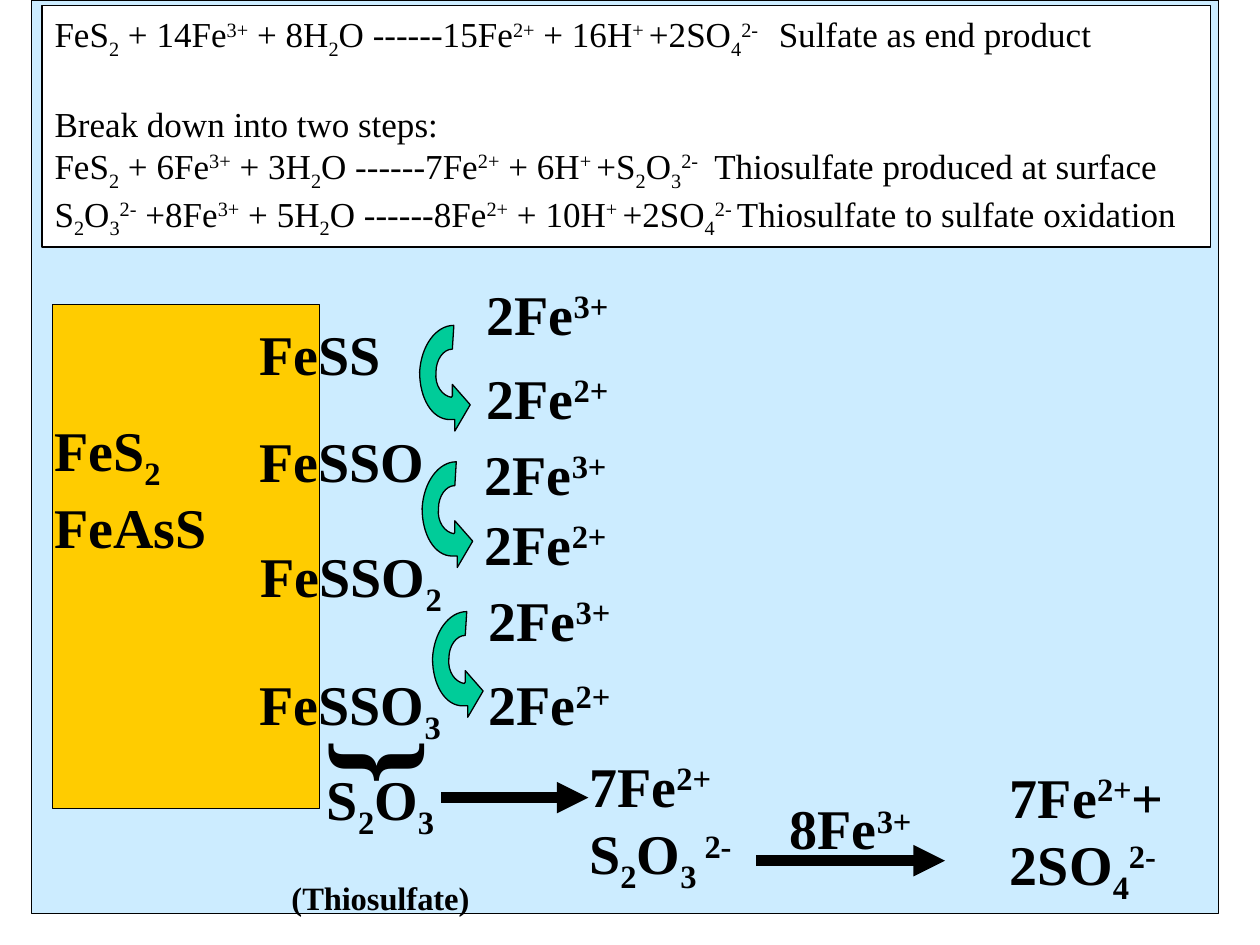
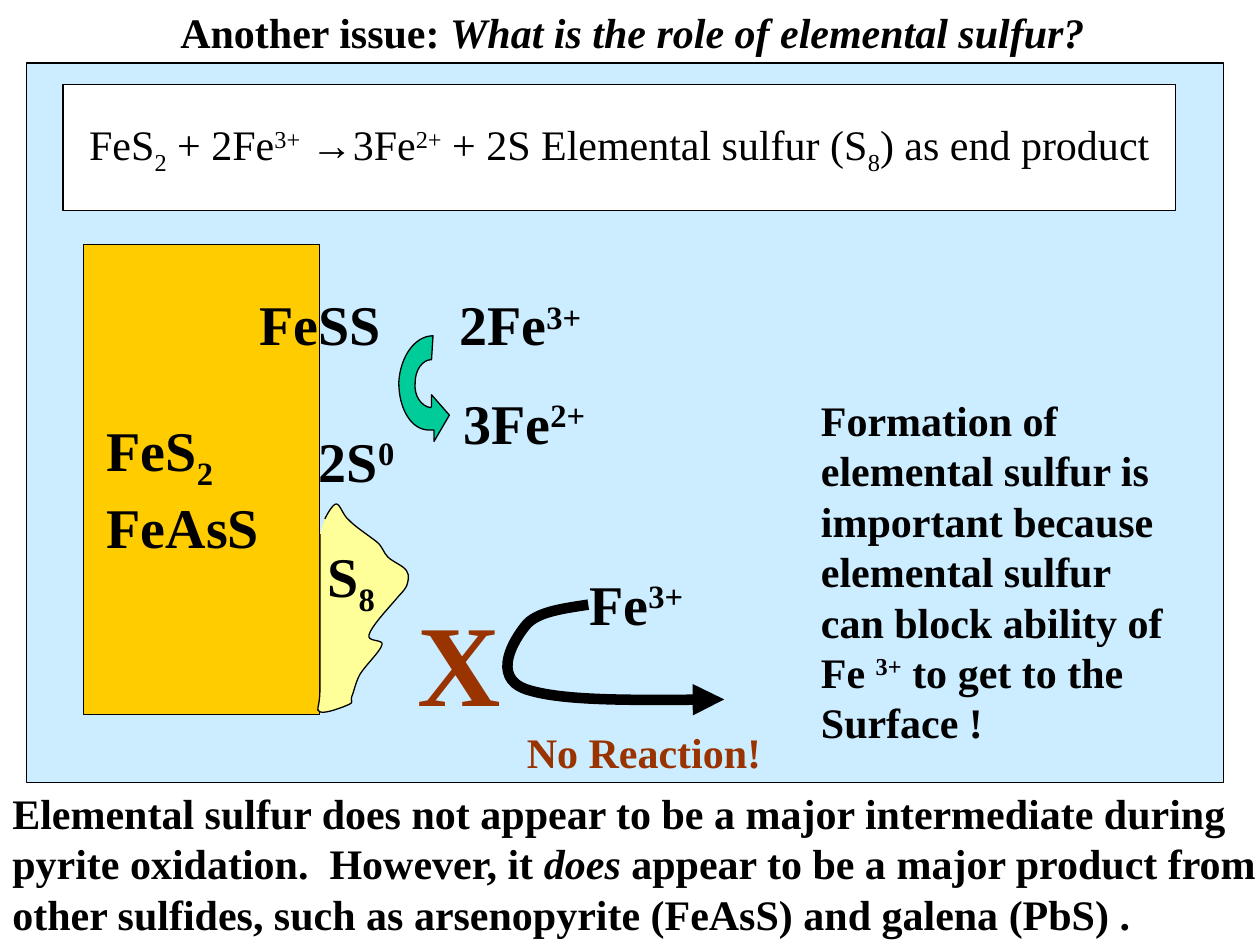
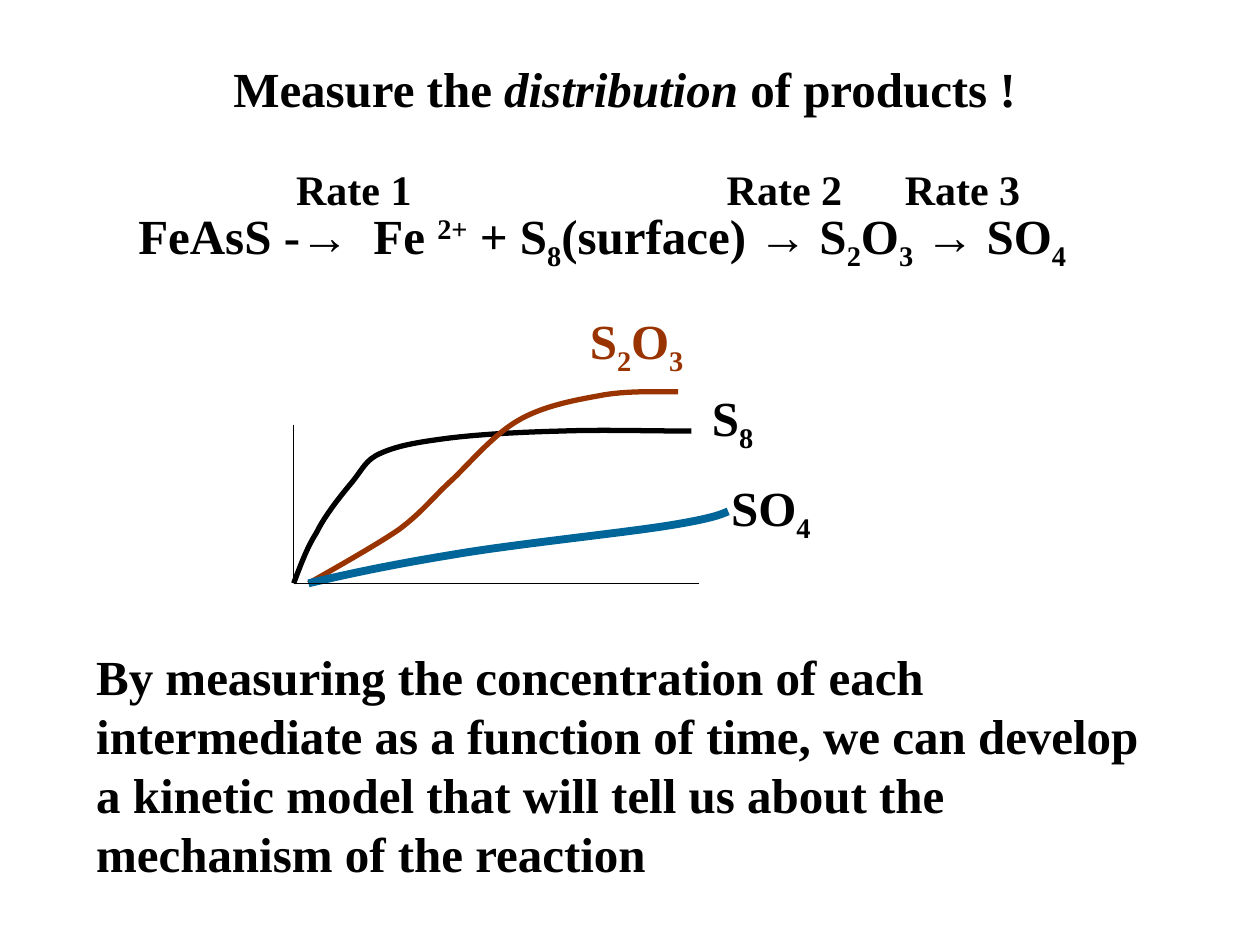
from dataclasses import dataclass

from lxml.etree import SubElement
from pptx import Presentation
from pptx.dml.color import RGBColor as RGB
from pptx.enum.shapes import MSO_CONNECTOR as CONN, MSO_SHAPE as SHAPE
from pptx.enum.text import MSO_ANCHOR as ANCHOR, MSO_AUTO_SIZE as AUTO, PP_ALIGN as ALIGN
from pptx.oxml.ns import qn
from pptx.util import Cm, Pt


@dataclass(frozen=True)
class Theme:
    font: str = "Times New Roman"
    ink: RGB = RGB(0x00, 0x00, 0x00)
    paper: RGB = RGB(0xFF, 0xFF, 0xFF)
    water: RGB = RGB(0xCC, 0xEC, 0xFF)
    mineral: RGB = RGB(0xFF, 0xCC, 0x00)
    transfer: RGB = RGB(0x00, 0xCC, 0x99)
    sulfur: RGB = RGB(0xFF, 0xFF, 0x99)
    rust: RGB = RGB(0x99, 0x33, 0x00)
    blue: RGB = RGB(0x00, 0x66, 0x99)
    equation: int = 20
    body: int = 24
    heading: int = 28
    species: int = 32
    symbol: int = 66
    thin: float = 0.75
    curve: float = 3
    thick: float = 4.5
    arrow: float = 6


T = Theme()
MARKS = {"_": "sub", "^": "sup", "*": "italic"}
BASELINES = {"sub": "-25000", "sup": "30000"}


def text(s, content, box=None, *, sp=None, size=T.species, bold=True, color=T.ink,
         align=ALIGN.LEFT, wrap=False, tabs=(), gaps=None):
    """Write paragraphs; _sub_, ^super^ and *italic* switch the run format."""
    framed = sp is not None and box is None
    sp = sp or s.shapes.add_textbox(*map(Cm, box))
    if box:
        sp.left, sp.top, sp.width, sp.height = map(Cm, box)
    tf = sp.text_frame
    tf.word_wrap = wrap
    tf.auto_size = AUTO.NONE if framed else AUTO.SHAPE_TO_FIT_TEXT
    tf.vertical_anchor = ANCHOR.MIDDLE if framed else ANCHOR.TOP
    for i, line in enumerate(content.split("\n")):
        p = tf.add_paragraph() if i else tf.paragraphs[0]
        if "\t" in line:
            stops = SubElement(p._p.get_or_add_pPr(), qn("a:tabLst"))
            for stop in tabs:
                SubElement(stops, qn("a:tab"), pos=str(Cm(stop)), algn="l")
        p.alignment = align
        p.space_before = Pt((gaps or {}).get(i, 0))
        parts, active = [["", set()]], set()
        for ch in line:
            if ch in MARKS:
                active = active ^ {MARKS[ch]}
                parts.append(["", active])
            else:
                parts[-1][0] += ch
        for words, styles in parts:
            if not words:
                continue
            r = p.add_run()
            r.text = words
            r.font.name, r.font.size, r.font.bold = T.font, Pt(size), bold
            if "italic" in styles:
                r.font.italic = True
            r.font.color.rgb = color
            for style in styles & set(BASELINES):
                r._r.get_or_add_rPr().set("baseline", BASELINES[style])
    return sp


def curve(s, start, pieces, *, origin=(0, 0), fill=None, color=T.ink, width=T.thin, close=False):
    """Draw line pieces (x, y) and Bezier pieces (x1, y1, x2, y2, x, y)."""
    points = [start] + [pair for piece in pieces for pair in zip(piece[::2], piece[1::2])]
    points = [(Cm(origin[0] + x), Cm(origin[1] + y)) for x, y in points]
    fb = s.shapes.build_freeform(*points[0])
    fb.add_line_segments(points[1:], close=close)
    sp = fb.convert_to_shape()
    # Join the three points of each Bezier piece into one curve segment
    segments = iter(list(sp._element.iter(qn("a:lnTo"))))
    for piece in pieces:
        segment = next(segments)
        if len(piece) == 6:
            segment.tag = qn("a:cubicBezTo")
            for _ in range(2):
                extra = next(segments)
                segment.append(extra[0])
                extra.getparent().remove(extra)
    sp.shadow.inherit = False
    if fill is None:
        sp.fill.background()
    else:
        sp.fill.solid()
        sp.fill.fore_color.rgb = fill
    sp.line.color.rgb, sp.line.width = color, Pt(width)
    return sp


prs = Presentation()
prs.slide_width, prs.slide_height = Cm(25.4), Cm(19.05)
title_only, blank = prs.slide_layouts[5], prs.slide_layouts[6]
steps_slide, sulfur_slide, rates_slide = [
    prs.slides.add_slide(layout) for layout in (blank, title_only, title_only)]

# Titles
for s, title, box, size in (
    (sulfur_slide, "Another issue: *What is the role of elemental sulfur?*",
     (3.38, 0, 18.77, 1.27), T.body),
    (rates_slide, "Measure the *distribution *of products !", (4.45, 1.06, 16.33, 1.45), T.heading),
):
    text(s, title, box, sp=s.shapes.title, size=size)

# Water, mineral and equation panels of both reaction slides
equation_boxes = []
for s, water, mineral, equation, label_x in (
    (steps_slide, (0.64, 0, 23.93, 18.42), (1.06, 6.14, 5.38, 10.16), (0.85, 0.11, 23.55, 4.87), 0.84),
    (sulfur_slide, (0.53, 1.27, 24.13, 14.5), (1.69, 4.93, 4.75, 9.47), (1.27, 1.7, 22.43, 2.54), 1.9),
):
    for box, fill in ((water, T.water), (mineral, T.mineral), (equation, T.paper)):
        sp = s.shapes.add_shape(SHAPE.RECTANGLE, *map(Cm, box))
        sp.shadow.inherit = False
        sp.fill.solid()
        sp.fill.fore_color.rgb = fill
        sp.line.color.rgb, sp.line.width = T.ink, Pt(T.thin)
    equation_boxes.append(sp)
    text(s, "FeS_2_\nFeAsS", (label_x, 8.26, 4.45, 2.97), wrap=True)

text(steps_slide,
     "FeS_2_ + 14Fe^3+^ + 8H_2_O ------15Fe^2+^ + 16H^+ ^+2SO_4_^2-^\tSulfate as end product\n"
     "Break down into two steps:\n"
     "FeS_2_ + 6Fe^3+^ + 3H_2_O ------7Fe^2+^ + 6H^+ ^+S_2_O_3_^2-^\tThiosulfate produced at surface\n"
     "S_2_O_3_^2-^ +8Fe^3+^ + 5H_2_O ------8Fe^2+^ + 10H^+ ^+2SO_4_^2- ^"
     "Thiosulfate to sulfate oxidation",
     sp=equation_boxes[0], size=T.equation, bold=False, wrap=True, tabs=(13.3, 14.6), gaps={1: 24})
text(sulfur_slide,
     "FeS_2_ + 2Fe^3+^ →3Fe^2+^ + 2S Elemental sulfur (S_8_) as end product",
     sp=equation_boxes[1], size=T.body, bold=False, align=ALIGN.CENTER, wrap=True)

# Curved electron-transfer arrows
transfer_arrow = [
    (0.46, 1.42, 0.3, 1.22, 0.33, 0.94), (0.33, 0.69, 0.48, 0.48, 0.66, 0.48), (0.69, 0),
    (0.33, 0, 0.03, 0.41, 0, 0.94), (0, 1.47, 0.25, 1.9, 0.61, 1.9),
    (0.71, 1.9), (0.71, 2.13), (1.02, 1.6), (0.66, 1.19), (0.66, 1.42)]
for s, origin in ((steps_slide, (8.46, 6.56)), (steps_slide, (8.51, 9.31)),
                  (steps_slide, (8.72, 12.33)), (sulfur_slide, (8.04, 6.77))):
    curve(s, (0.64, 1.45), transfer_arrow, origin=origin, fill=T.transfer, close=True)

# Slide 1: surface species, iron couples and products
for label, x, y, w in (
    ("FeSS", 4.98, 6.32, 2.95), ("FeSSO", 4.98, 8.47, 3.84),
    ("FeSSO_2_", 5, 10.8, 4.19), ("FeSSO_3_", 4.98, 13.37, 4.19),
    ("2Fe^3+^", 9.56, 5.51, 3.05), ("2Fe^2+^", 9.56, 7.2, 3.05),
    ("2Fe^3+^", 9.52, 8.74, 3.05), ("2Fe^2+^", 9.52, 10.14, 3.05),
    ("2Fe^3+^", 9.6, 11.68, 3.05), ("2Fe^2+^", 9.6, 13.37, 3.05),
    ("8Fe^3+^", 15.67, 15.88, 3.05),
):
    text(steps_slide, label, (x, y, w, 1.6))
brace = text(steps_slide, "}", (7.16, 13.84, 1.42, 3.05), size=T.symbol)
brace.rotation = 90
text(steps_slide, "S_2_O_3_\n_(Thiosulfate)_", (5.37, 15.28, 4.6, 2.49), align=ALIGN.CENTER, wrap=True)
text(steps_slide, "7Fe^2+^\nS_2_O_3 _^2-^", (11.63, 15.03, 3.56, 2.97))
text(steps_slide, "7Fe^2+^+\n2SO_4_^2-^", (20.11, 15.24, 4.52, 2.97), wrap=True)

# Slide 2: sulfur coating and blocked reaction
curve(sulfur_slide, (6.45, 10.77), [
    (6.45, 11.1, 6.45, 11.43, 6.45, 11.96), (6.45, 12.47, 6.45, 13.49, 6.45, 13.89),
    (6.45, 14.3, 6.35, 14.3, 6.45, 14.35), (6.55, 14.4, 6.93, 14.25, 7.04, 14.2),
    (7.14, 14.15, 7.06, 14.15, 7.09, 14.05), (7.14, 13.94, 7.16, 13.77, 7.26, 13.59),
    (7.37, 13.41, 7.67, 13.13, 7.7, 13), (7.75, 12.88, 7.39, 12.95, 7.44, 12.8),
    (7.47, 12.65, 7.82, 12.27, 7.95, 12.12), (8.1, 11.94, 8.15, 11.91, 8.2, 11.81),
    (8.23, 11.71, 8.26, 11.61, 8.2, 11.51), (8.13, 11.4, 7.92, 11.33, 7.82, 11.23),
    (7.72, 11.13, 7.72, 11.02, 7.59, 10.92), (7.44, 10.8, 7.16, 10.62, 7.04, 10.49),
    (6.91, 10.39, 6.86, 10.16, 6.78, 10.16), (6.71, 10.16, 6.6, 10.36, 6.55, 10.46),
], fill=T.sulfur)
deflected = curve(sulfur_slide, (11.86, 12.19), [
    (11.33, 12.27, 10.8, 12.34, 10.59, 12.62), (10.36, 12.9, 9.91, 13.64, 10.59, 13.89),
    (11.25, 14.12, 12.93, 14.12, 14.6, 14.1)], width=T.arrow)
for label, x, y, w in (
    ("FeSS", 4.98, 5.72, 2.95), ("2Fe^3+^", 9.01, 5.72, 3.05), ("3Fe^2+^", 9.09, 7.7, 3.05),
    ("2S^0^", 6.18, 8.47, 2.08), ("S_8_", 6.35, 10.8, 1.5), ("Fe^3+^", 11.63, 11.35, 2.49),
):
    text(sulfur_slide, label, (x, y, w, 1.6))
text(sulfur_slide, "X", (8.16, 11.79, 2.18, 3.05), size=T.symbol, color=T.rust)
text(sulfur_slide, "No Reaction!", (10.37, 14.53, 5.23, 1.27), size=T.body, color=T.rust)
text(sulfur_slide,
     "Formation of\nelemental sulfur is\nimportant because\nelemental sulfur\n"
     "can block ability of\nFe ^3+^ to get to the\nSurface !",
     (16.3, 7.83, 7.6, 7.37), size=T.body)
text(sulfur_slide,
     "Elemental sulfur does not appear to be a major intermediate during pyrite oxidation.  "
     "However, it *does* appear to be a major product from other sulfides, such as "
     "arsenopyrite (FeAsS) and galena (PbS) .",
     (0, 15.75, 25.6, 3.3), size=T.body, wrap=True)

# Slide 3: reaction chain with its rates
text(rates_slide, "FeAsS -→  Fe ^2+^ + S_8_(surface) → S_2_O_3_ → SO_4_",
     (2.54, 4.01, 19.51, 1.45), size=T.heading)
for n, x in enumerate((5.72, 14.4, 17.99), start=1):
    text(rates_slide, f"Rate {n}", (x, 3.18, 2.84, 1.27), size=T.body)

# Slide 3: product curves over time
for label, x, y, w, color, label_color, width, start, pieces in (
    ("S_8_", 14.1, 7.68, 1.4, T.ink, T.ink, T.curve, (5.92, 11.76), [
        (6.05, 11.43, 6.17, 11.07, 6.38, 10.74), (6.55, 10.39, 6.88, 9.98, 7.09, 9.73),
        (7.32, 9.45, 7.37, 9.27, 7.67, 9.14), (8, 8.99, 8.38, 8.92, 8.99, 8.84),
        (9.6, 8.76, 10.49, 8.71, 11.33, 8.69), (12.14, 8.66, 13.06, 8.69, 13.94, 8.69)]),
    ("S_2_O_3_", 11.64, 6.14, 2.49, T.rust, T.rust, T.curve, (6.22, 11.76), [
        (6.53, 11.58, 7.54, 11.02, 8.05, 10.67), (8.53, 10.31, 8.74, 10.01, 9.14, 9.65),
        (9.53, 9.27, 9.96, 8.76, 10.44, 8.48), (10.92, 8.2, 11.51, 8.08, 12.07, 7.98),
        (12.6, 7.87, 13.34, 7.9, 13.67, 7.9)]),
    ("SO_4_", 14.49, 9.5, 2.16, T.blue, T.ink, T.thick, (6.22, 11.76), [
        (7.06, 11.56, 7.92, 11.38, 9.14, 11.18), (10.36, 10.97, 12.6, 10.74, 13.51, 10.59),
        (14.43, 10.44, 14.55, 10.36, 14.68, 10.31)]),
):
    curve(rates_slide, start, pieces, color=color, width=width)
    text(rates_slide, label, (x, y, w, 1.45), size=T.heading, color=label_color)
text(rates_slide,
     "By measuring the concentration of each intermediate as a function of time, we can "
     "develop a kinetic model that will tell us about the mechanism of the reaction",
     (1.69, 12.91, 21.79, 5), size=T.heading, wrap=True)

# Straight reaction arrows and graph axes
arrows = [deflected]
for s, ends, width in (
    (steps_slide, (8.89, 16.08, 11.86, 16.08), T.arrow),
    (steps_slide, (15.24, 17.35, 19.05, 17.35), T.arrow),
    (rates_slide, (5.92, 8.56, 5.92, 11.76), T.thin),
    (rates_slide, (5.92, 11.76, 14.1, 11.76), T.thin),
):
    line = s.shapes.add_connector(CONN.STRAIGHT, *map(Cm, ends))
    line.line.color.rgb, line.line.width = T.ink, Pt(width)
    SubElement(line._element.spPr, qn("a:effectLst"))
    if width == T.arrow:
        arrows.append(line)
for arrow in arrows:
    SubElement(arrow.line._get_or_add_ln(), qn("a:tailEnd"), type="triangle")

prs.save("out.pptx")
